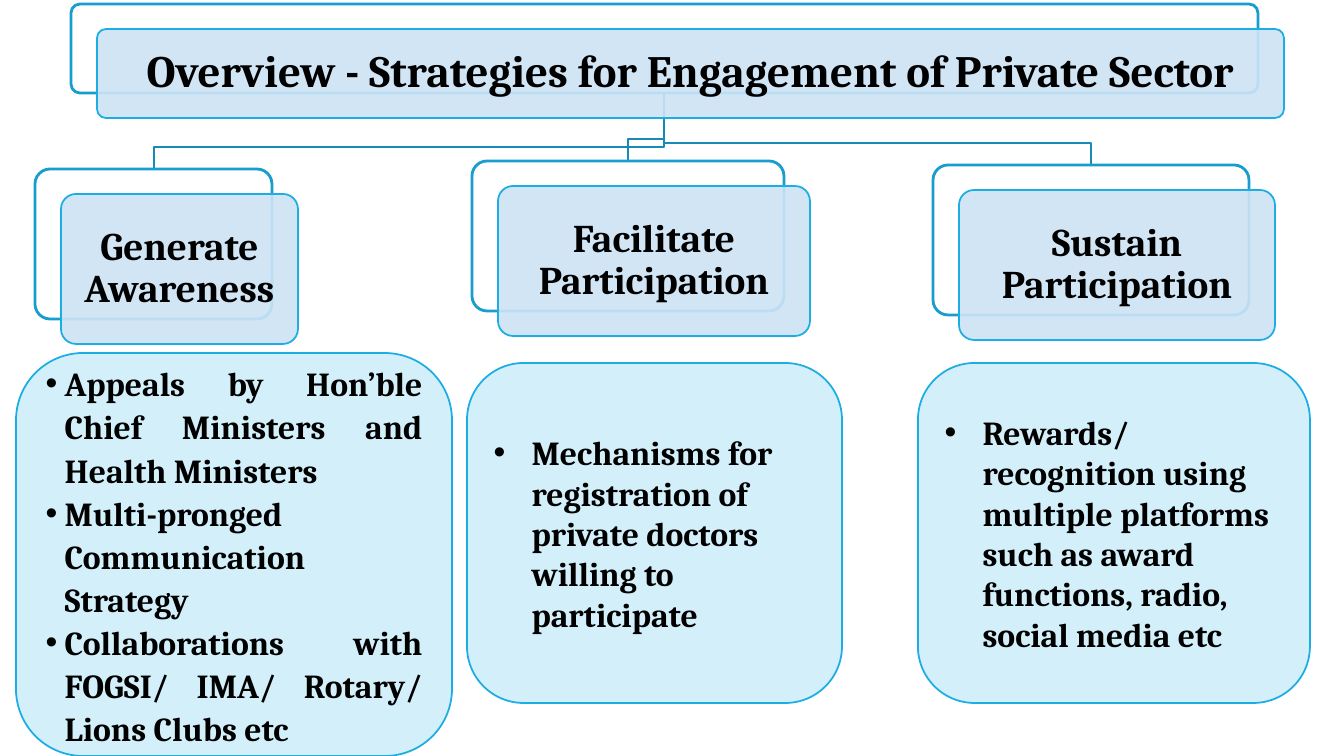
from lxml.etree import SubElement
from pptx import Presentation
from pptx.dml.color import RGBColor
from pptx.enum.shapes import MSO_SHAPE as SHAPE
from pptx.enum.text import MSO_ANCHOR as ANCHOR, MSO_AUTO_SIZE as AUTO_SIZE, PP_ALIGN as ALIGN
from pptx.oxml.ns import qn
from pptx.util import Pt

PX = 914400 / 100.8
WIDTH, HEIGHT = 1344, 756
TITLE_ONLY = 5
CARD_SHIFT_X, CARD_SHIFT_Y = 26, 25
CARD_HEIGHT = 150
ELBOW_RISE = 22

TITLE = "Overview - Strategies for Engagement of Private Sector"
TITLE_BOX = (71, 4, 1187, 89)

STRATEGIES = [
    dict(heading="Generate Awareness", card=(35, 169, 237, CARD_HEIGHT),
         panel=(16, 353, 436, 403),
         points=["Appeals by Hon’ble Chief Ministers and Health Ministers",
                 "Multi-pronged Communication Strategy",
                 "Collaborations with FOGSI/ IMA/ Rotary/ Lions Clubs etc"],
         style=dict(align=ALIGN.JUSTIFY, spacing=1.07, indent=19)),
    dict(heading="Facilitate Participation", card=(472, 161, 312, CARD_HEIGHT),
         panel=(467, 363, 375, 340),
         points=["Mechanisms for registration of private doctors willing to participate"],
         style=dict(align=ALIGN.LEFT, indent=38)),
    dict(heading="Sustain Participation", card=(933, 165, 316, CARD_HEIGHT),
         panel=(918, 363, 392, 340),
         points=["Rewards/ recognition using multiple platforms such as award "
                 "functions, radio, social media etc"],
         style=dict(align=ALIGN.LEFT, indent=38)),
]


def emu(px):
    return round(px * PX)


def color(hex_string):
    return RGBColor.from_string(hex_string)


def set_line(shape, line, width):
    shape.line.color.rgb = color(line)
    shape.line.width = Pt(width)
    shape.shadow.inherit = False


def write(shape, paragraphs, size, align=ALIGN.CENTER, spacing=None, indent=0, inset=(10, 5)):
    """Fill a shape with bold paragraphs, bulleted when indent is given."""
    frame = shape.text_frame
    frame.word_wrap = True
    frame.auto_size = AUTO_SIZE.NONE
    frame.vertical_anchor = ANCHOR.MIDDLE
    frame.margin_left = frame.margin_right = emu(inset[0])
    frame.margin_top = frame.margin_bottom = emu(inset[1])
    frame.text = "\n".join(paragraphs)
    for paragraph in frame.paragraphs:
        paragraph.alignment = align
        if spacing:
            paragraph.line_spacing = spacing
        if indent:
            properties = paragraph._p.get_or_add_pPr()
            properties.set("marL", str(emu(indent)))
            properties.set("indent", str(-emu(indent)))
            SubElement(properties, qn("a:buFont")).set("typeface", "Arial")
            SubElement(properties, qn("a:buChar")).set("char", "•")
        font = paragraph.font
        font.name, font.size, font.bold = "Cambria", Pt(size), True
        font.color.rgb = color("000000")


def add_round_box(slide, box, fill, line, width=1.25, radius=None, opacity=None):
    shape = slide.shapes.add_shape(SHAPE.ROUNDED_RECTANGLE, *map(emu, box))
    if radius is not None:
        shape.adjustments[0] = radius
    shape.fill.solid()
    shape.fill.fore_color.rgb = color(fill)
    if opacity is not None:
        tint = shape.element.spPr.find(qn("a:solidFill"))[0]
        SubElement(tint, qn("a:alpha")).set("val", str(opacity * 1000))
    set_line(shape, line, width)
    return shape


def add_card(slide, box):
    """Draw a back outline with a shifted tinted front, and return the front."""
    left, top, width, height = box
    add_round_box(slide, box, "FFFFFF", "199DCF", width=2, radius=0.1)
    front = (left + CARD_SHIFT_X, top + CARD_SHIFT_Y, width, height)
    return add_round_box(slide, front, "CDE3F5", "1CADE4", radius=0.1, opacity=90)


def add_branch(slide, parent, child):
    """Run an elbow from the parent's bottom centre to the child's top centre."""
    start_x, start_y = parent[0] + parent[2] / 2, parent[1] + parent[3]
    end_x, end_y = child[0] + child[2] / 2, child[1]
    bend_y = end_y - ELBOW_RISE
    builder = slide.shapes.build_freeform(start_x, start_y, scale=PX)
    builder.add_line_segments([(start_x, bend_y), (end_x, bend_y), (end_x, end_y)], close=False)
    branch = builder.convert_to_shape()
    branch.fill.background()
    set_line(branch, "168BB7", 1.25)


def add_title(slide, box):
    front = add_card(slide, box)
    title = slide.shapes.title
    margin = emu(3)
    title.left, title.top = front.left + margin, front.top + margin
    title.width, title.height = front.width - 2 * margin, front.height - 2 * margin
    write(title, [TITLE], size=32, spacing=0.9, inset=(13, 13))
    front.element.addnext(title.element)


def add_strategy(slide, strategy):
    card = add_card(slide, strategy["card"])
    write(card, [strategy["heading"]], size=28, spacing=0.9, inset=(12, 12))
    panel = add_round_box(slide, strategy["panel"], "D2EFFA", "1CADE4")
    write(panel, strategy["points"], size=24, **strategy["style"])


def main():
    deck = Presentation()
    deck.slide_width, deck.slide_height = emu(WIDTH), emu(HEIGHT)
    slide = deck.slides.add_slide(deck.slide_layouts[TITLE_ONLY])
    for strategy in reversed(STRATEGIES):
        add_branch(slide, TITLE_BOX, strategy["card"])
    add_title(slide, TITLE_BOX)
    for strategy in STRATEGIES:
        add_strategy(slide, strategy)
    deck.save("out.pptx")


if __name__ == "__main__":
    main()
